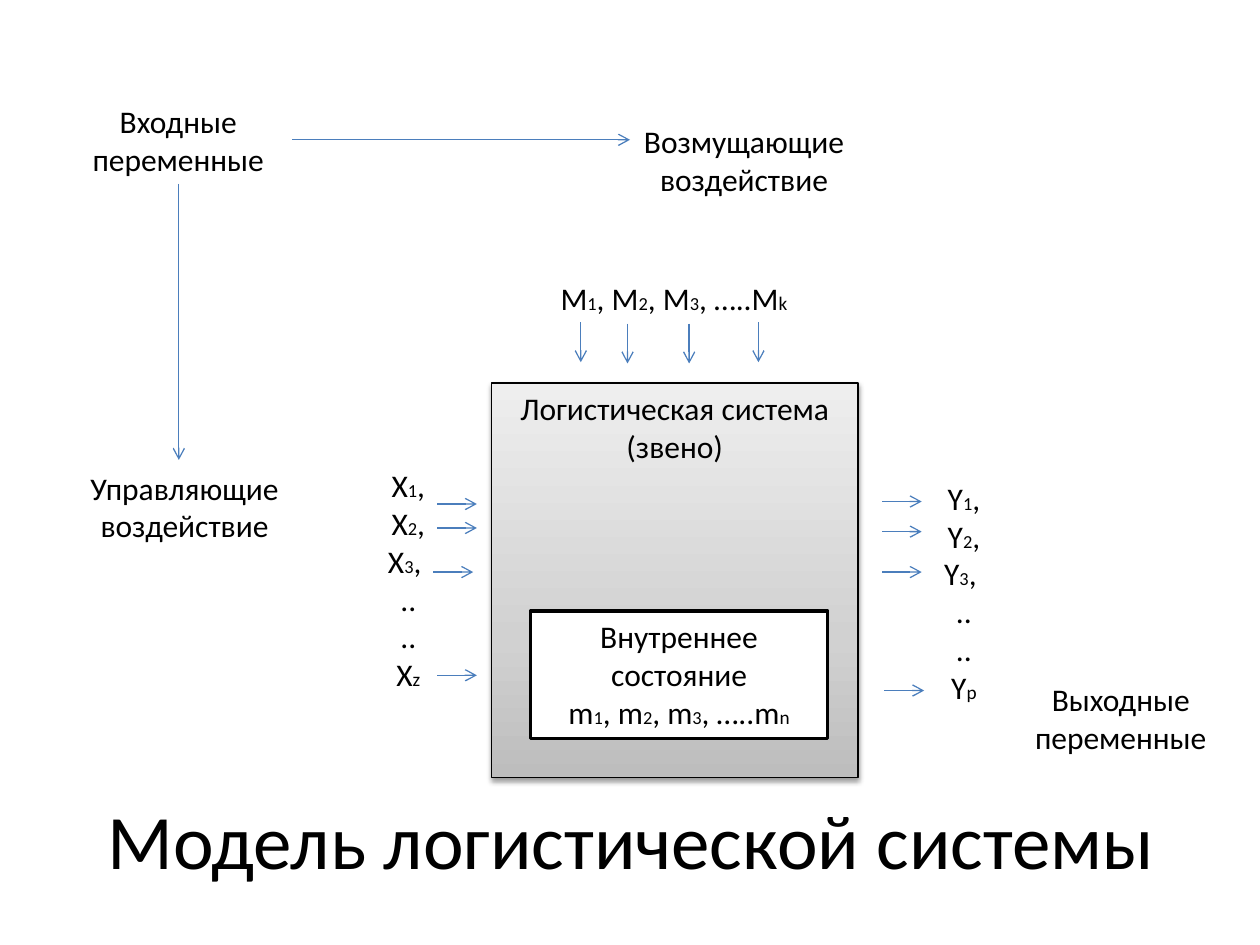
from copy import deepcopy
from typing import Any, NamedTuple

from lxml import etree
from pptx import Presentation
from pptx.dml.color import RGBColor
from pptx.enum import shapes, text
from pptx.oxml import ns
from pptx.util import Pt

BLACK = RGBColor(0x00, 0x00, 0x00)
WHITE = RGBColor(0xFF, 0xFF, 0xFF)
ARROW_BLUE = RGBColor(0x4B, 0x7E, 0xBC)
SYSTEM_GRADIENT = (
    (0, RGBColor(0xBD, 0xBD, 0xBD)),
    (0.35, RGBColor(0xD1, 0xD1, 0xD1)),
    (1, RGBColor(0xEE, 0xEE, 0xEE)),
)
FONT = "Calibri"
LABEL_SIZE = (130.3, 51.1)
LIST_SIZE = (49, 138.2)
ARROW_LENGTH = 22.7


class Label(NamedTuple):
    wording: str
    left: float
    top: float
    width: float
    height: float


class Arrow(NamedTuple):
    x1: float
    y1: float
    x2: float
    y2: float


def add_run(paragraph: Any, wording: str, size: float) -> None:
    if wording:
        run = paragraph.add_run()
        run.text = wording
        run.font.name = FONT
        run.font.size = Pt(size)
        run.font.color.rgb = BLACK


def write_text(shape: Any, wording: str, *, size: float = 18,
               anchor: Any = text.MSO_ANCHOR.TOP) -> None:
    """Lines part at a newline; the character after "_" is an index."""
    frame = shape.text_frame
    frame.word_wrap = True
    frame.vertical_anchor = anchor
    for number, line in enumerate(wording.split("\n")):
        paragraph = frame.add_paragraph() if number else frame.paragraphs[0]
        paragraph.alignment = text.PP_ALIGN.CENTER
        start, *indexed = line.split("_")
        add_run(paragraph, start, size)
        for part in indexed:
            add_run(paragraph, part[0], 10.5 if part[0].isdigit() else 11)
            add_run(paragraph, part[1:], size)


def add_label(slide: Any, label: Label, **text_format: Any) -> None:
    box = slide.shapes.add_textbox(*map(Pt, label[1:]))
    write_text(box, label.wording, **text_format)


def add_block(slide: Any, label: Label, line_width: float) -> Any:
    block = slide.shapes.add_shape(shapes.MSO_SHAPE.RECTANGLE, *map(Pt, label[1:]))
    block.shadow.inherit = False
    block.fill.solid()
    block.fill.fore_color.rgb = WHITE
    block.line.color.rgb = BLACK
    block.line.width = Pt(line_width)
    write_text(block, label.wording)
    return block


def shade_system(block: Any) -> None:
    """Grey gradient, dark at the bottom, and a soft shadow below."""
    block.fill.gradient()
    block.fill.gradient_angle = 90
    properties = block._element.spPr
    stop_list = properties.find(".//" + ns.qn("a:gsLst"))
    stop_list.append(deepcopy(stop_list[-1]))
    for stop, (position, color) in zip(block.fill.gradient_stops, SYSTEM_GRADIENT):
        stop.position = position
        stop.color.rgb = color

    effects = properties.find(ns.qn("a:effectLst"))
    shadow = etree.SubElement(
        effects, ns.qn("a:outerShdw"), blurRad=str(Pt(3.1)), dist=str(Pt(1.6)),
        dir=str(90 * 60000), rotWithShape="0")
    color = etree.SubElement(shadow, ns.qn("a:srgbClr"), val=str(BLACK))
    etree.SubElement(color, ns.qn("a:alpha"), val="38000")


def add_arrow(slide: Any, arrow: Arrow) -> None:
    connector = slide.shapes.add_connector(
        shapes.MSO_CONNECTOR.STRAIGHT, *map(Pt, arrow))
    connector.line.color.rgb = ARROW_BLUE
    connector.line.width = Pt(0.75)
    etree.SubElement(connector.line._get_or_add_ln(), ns.qn("a:tailEnd"), type="arrow")
    etree.SubElement(connector._element.spPr, ns.qn("a:effectLst"))


TITLE = Label("Модель логистической системы", 36.7, 434.2, 648, 90)
LABELS = (
    Label("Входные переменные", 36.7, 54.7, *LABEL_SIZE),
    Label("Возмущающие воздействие", 360, 66.2, *LABEL_SIZE),
    Label("Выходные переменные", 575.3, 385.2, *LABEL_SIZE),
    Label("Управляющие воздействие", 40.3, 264.2, *LABEL_SIZE),
    Label("M_1, M_2, M_3, …..M_k", 300.2, 156.2, 169.9, 28.8),
    Label("X_1,\n X_2, \nX_3, \n..\n..\nX_z", 208.8, 262.8, *LIST_SIZE),
    Label("Y_1,\n Y_2, \nY_3, \n..\n..\nY_p", 526.3, 270, *LIST_SIZE),
)
SYSTEM = Label("Логистическая система (звено)", 280.8, 218.9, 209.5, 225.4)
INNER_STATE = Label("Внутреннее состояние\nm_1, m_2, m_3, …..m_n",
                    303.1, 349.2, 169.9, 72.7)

# Starting points of the short arrows
CONTROL_STARTS = ((249.8, 288), (249.8, 301.7), (247.7, 326.9), (249.8, 385.9))
OUTPUT_STARTS = ((504, 286.6), (504, 303.8), (504, 326.9), (505.4, 394.6))
DISTURBANCE_STARTS = ((331.9, 184.3), (358.6, 185), (393.8, 185), (433.4, 184.3))


def main() -> None:
    presentation = Presentation()
    presentation.slide_width, presentation.slide_height = Pt(720), Pt(540)
    slide = presentation.slides.add_slide(presentation.slide_layouts[6])

    # Title and labels
    add_label(slide, TITLE, size=44, anchor=text.MSO_ANCHOR.MIDDLE)
    for label in LABELS:
        add_label(slide, label)

    # Logistics system with its inner state
    shade_system(add_block(slide, SYSTEM, 0.75))
    add_block(slide, INNER_STATE, 2)

    # Arrows from the input variables to both kinds of influence
    add_arrow(slide, Arrow(167, 79.9, 360, 79.9))
    add_arrow(slide, Arrow(102.2, 105.1, 102.2, 262.8))

    # Short arrows into and out of the system
    for x, y in CONTROL_STARTS + OUTPUT_STARTS:
        add_arrow(slide, Arrow(x, y, x + ARROW_LENGTH, y))
    for x, y in DISTURBANCE_STARTS:
        add_arrow(slide, Arrow(x, y, x, y + ARROW_LENGTH))

    presentation.save("out.pptx")


if __name__ == "__main__":
    main()
